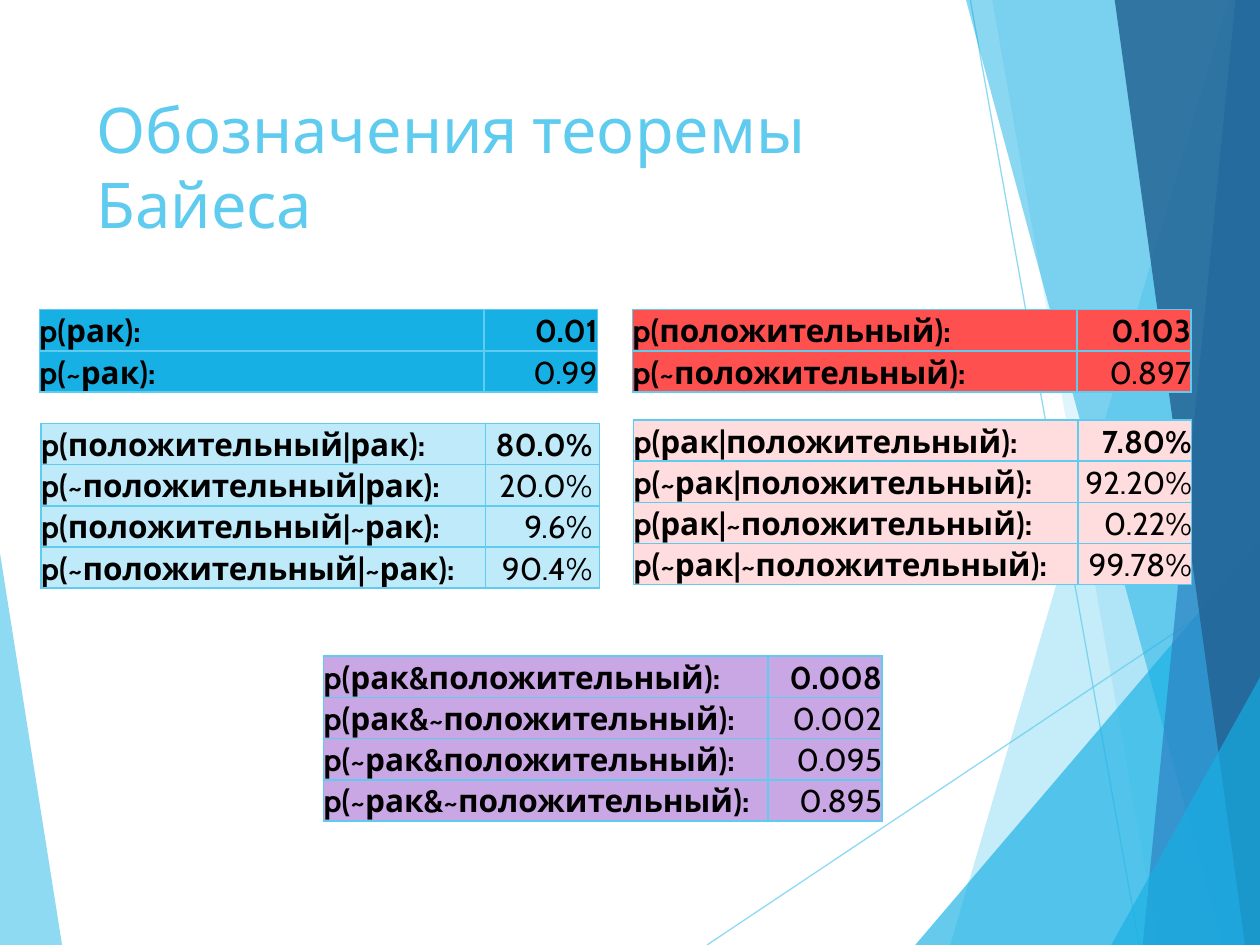
from dataclasses import dataclass

from lxml import etree
from pptx import Presentation
from pptx.dml.color import RGBColor
from pptx.enum import shapes, text
from pptx.oxml import ns
from pptx.util import Pt

FONT = "Cabin"
SKY = RGBColor(0x5F, 0xCB, 0xEF)
CYAN = RGBColor(0x17, 0xB0, 0xE4)
BLUE = RGBColor(0x2E, 0x83, 0xC3)
NAVY = RGBColor(0x22, 0x62, 0x92)
RED = RGBColor(0xFF, 0x50, 0x50)
PALE_BLUE = RGBColor(0xBF, 0xEA, 0xF9)
PALE_RED = RGBColor(0xFF, 0xDD, 0xDE)
LILAC = RGBColor(0xC9, 0xA6, 0xE4)
BLACK = RGBColor(0, 0, 0)

WIDTH, HEIGHT = 720, 540
COLUMN_WIDTHS = (254, 65)
ROW_HEIGHT = 23


@dataclass
class Facet:
    points: list[tuple[float, float]]
    color: RGBColor
    opacity: int


@dataclass
class Ray:
    start: tuple[float, float]
    end: tuple[float, float]


@dataclass
class ProbabilityTable:
    left: float
    top: float
    color: RGBColor
    rows: list[tuple[str, str]]


# Background, from back to front
BACKDROP = [
    Facet([(0, 316), (35.5, HEIGHT), (0, HEIGHT)], SKY, 70),
    Ray((404, HEIGHT), (WIDTH, 329)),
    Ray((554.5, 0), (651, HEIGHT)),
    Facet([(702, 0), (543, HEIGHT), (WIDTH, HEIGHT), (WIDTH, 0)], SKY, 36),
    Facet([(567, 0), (662, HEIGHT), (WIDTH, HEIGHT), (WIDTH, 0)], SKY, 20),
    Facet([(523, HEIGHT), (WIDTH, 309), (WIDTH, HEIGHT)], CYAN, 66),
    Facet([(552, 0), (698.5, HEIGHT), (WIDTH, HEIGHT), (WIDTH, 0)], CYAN, 50),
    Facet([(706, 0), (653, HEIGHT), (WIDTH, HEIGHT), (WIDTH, 0)], BLUE, 70),
    Facet([(637, 0), (711.5, HEIGHT), (WIDTH, HEIGHT), (WIDTH, 0)], NAVY, 82),
    Facet([(635, HEIGHT), (WIDTH, 387), (WIDTH, HEIGHT)], CYAN, 66),
]

TABLES = [
    ProbabilityTable(361.5, 177, RED, [
        ("p(положительный):", "0.103"),
        ("p(~положительный):", "0.897"),
    ]),
    ProbabilityTable(22.5, 177, CYAN, [
        ("p(рак):", "0.01"),
        ("p(~рак):", "0.99"),
    ]),
    ProbabilityTable(23.5, 242, PALE_BLUE, [
        ("p(положительный|рак):", "80.0% "),
        ("p(~положительный|рак):", "20.0% "),
        ("p(положительный|~рак):", "9.6% "),
        ("p(~положительный|~рак):", "90.4% "),
    ]),
    ProbabilityTable(185, 375, LILAC, [
        ("p(рак&положительный):", "0.008"),
        ("p(рак&~положительный):", "0.002"),
        ("p(~рак&положительный):", "0.095"),
        ("p(~рак&~положительный):", "0.895"),
    ]),
    ProbabilityTable(362, 240, PALE_RED, [
        ("p(рак|положительный):", "7.80%"),
        ("p(~рак|положительный):", "92.20%"),
        ("p(рак|~положительный):", "0.22%"),
        ("p(~рак|~положительный):", "99.78%"),
    ]),
]


def set_opacity(shape, percent: int) -> None:
    for color in shape._element.spPr.iter(ns.qn("a:srgbClr")):
        etree.SubElement(color, ns.qn("a:alpha"), val=str(percent * 1000))


def draw_facet(slide, facet: Facet) -> None:
    corners = [(Pt(x), Pt(y)) for x, y in facet.points]
    builder = slide.shapes.build_freeform(*corners[0])
    builder.add_line_segments(corners[1:], close=True)
    outline = builder.convert_to_shape()
    outline.shadow.inherit = False
    outline.fill.solid()
    outline.fill.fore_color.rgb = facet.color
    outline.line.fill.background()
    set_opacity(outline, facet.opacity)


def draw_ray(slide, ray: Ray) -> None:
    line = slide.shapes.add_connector(
        shapes.MSO_CONNECTOR.STRAIGHT, *map(Pt, ray.start + ray.end))
    line.line.color.rgb = SKY
    line.line.width = Pt(0.75)
    set_opacity(line, 70)
    etree.SubElement(line._element.spPr, ns.qn("a:effectLst"))


def add_borders(cell) -> None:
    properties = cell._tc.get_or_add_tcPr()
    for position, side in enumerate(("lnL", "lnR", "lnT", "lnB")):
        border = etree.Element(ns.qn(f"a:{side}"), w=str(Pt(1)))
        fill = etree.SubElement(border, ns.qn("a:solidFill"))
        etree.SubElement(fill, ns.qn("a:srgbClr"), val=str(SKY))
        properties.insert(position, border)


def fill_cell(cell, content: str, color: RGBColor, bold: bool, align) -> None:
    cell.fill.solid()
    cell.fill.fore_color.rgb = color
    cell.margin_left = cell.margin_right = cell.margin_top = cell.margin_bottom = 0
    cell.text_frame.text = content
    paragraph = cell.text_frame.paragraphs[0]
    paragraph.alignment = align
    paragraph.line_spacing = 1.07
    font = paragraph.runs[0].font
    font.name, font.size, font.bold = FONT, Pt(18), bold
    font.color.rgb = BLACK
    add_borders(cell)


def draw_table(slide, data: ProbabilityTable) -> None:
    count = len(data.rows)
    table = slide.shapes.add_table(
        count, 2, Pt(data.left), Pt(data.top),
        Pt(sum(COLUMN_WIDTHS)), Pt(count * ROW_HEIGHT)).table
    table.first_row = table.horz_banding = False
    for column, width in zip(table.columns, COLUMN_WIDTHS):
        column.width = Pt(width)
    for index, (label, value) in enumerate(data.rows):
        fill_cell(table.cell(index, 0), label, data.color, True, text.PP_ALIGN.LEFT)
        # Only the first value of each table is bold
        fill_cell(table.cell(index, 1), value, data.color, index == 0,
                  text.PP_ALIGN.RIGHT)


def write_title(slide) -> None:
    title = slide.shapes.title
    title.left, title.top, title.width, title.height = map(Pt, (48, 48, 500, 104))
    frame = title.text_frame
    frame.text = "Обозначения теоремы Байеса"
    frame.word_wrap = True
    frame.auto_size = text.MSO_AUTO_SIZE.NONE
    frame.vertical_anchor = text.MSO_ANCHOR.TOP
    paragraph = frame.paragraphs[0]
    paragraph.alignment = text.PP_ALIGN.LEFT
    font = paragraph.runs[0].font
    font.name, font.size = FONT, Pt(36)
    font.color.rgb = SKY


def main() -> None:
    deck = Presentation()
    deck.slide_width, deck.slide_height = Pt(WIDTH), Pt(HEIGHT)
    slide = deck.slides.add_slide(deck.slide_layouts.get_by_name("Title Only"))
    for part in BACKDROP:
        if isinstance(part, Facet):
            draw_facet(slide, part)
        else:
            draw_ray(slide, part)
    write_title(slide)
    for table in TABLES:
        draw_table(slide, table)
    deck.save("out.pptx")


if __name__ == "__main__":
    main()
